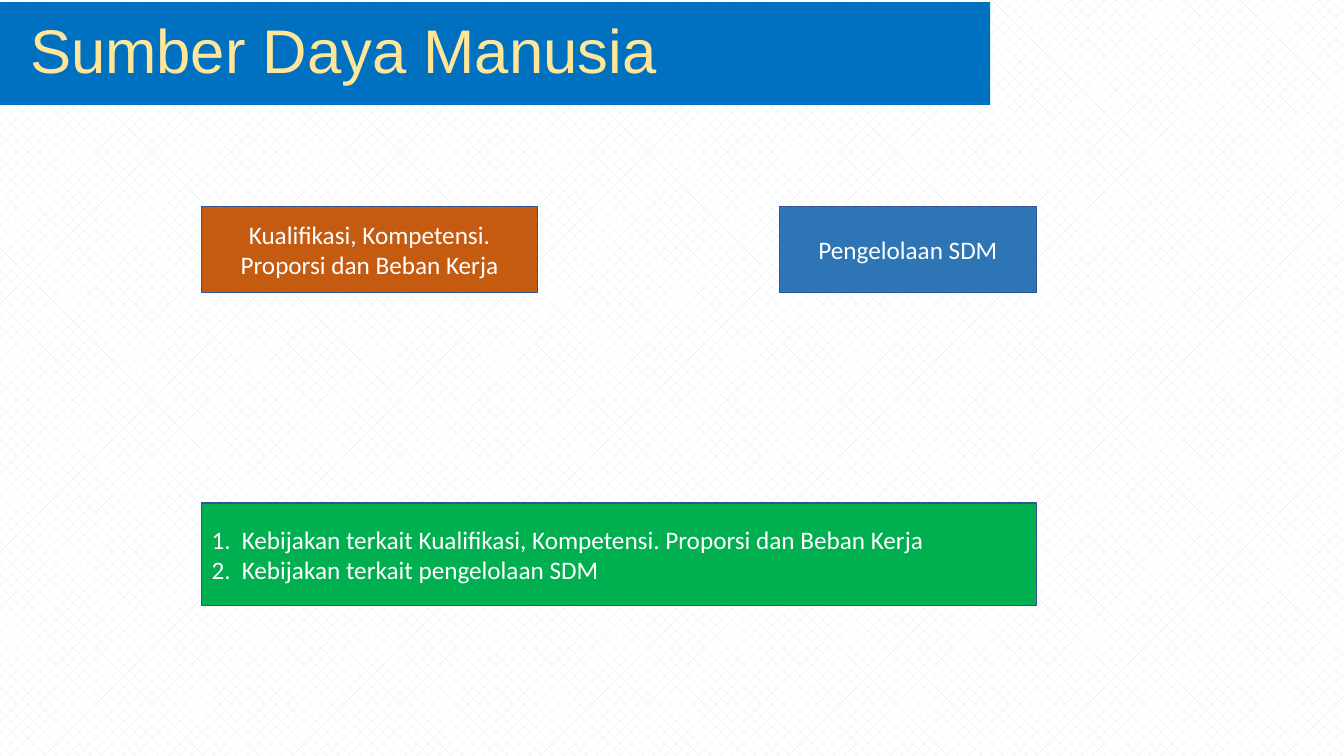
import pptx
import pptx.util
import pptx.dml.color
import pptx.enum.dml
import pptx.enum.shapes
import pptx.enum.text
from lxml import etree

Inches, Pt = pptx.util.Inches, pptx.util.Pt
RGBColor = pptx.dml.color.RGBColor
ALIGN = pptx.enum.text.PP_ALIGN

WIDTH, HEIGHT = 13.33, 7.5
WHITE = RGBColor(0xFF, 0xFF, 0xFF)
PALE_BLUE = RGBColor(0xDE, 0xEB, 0xF7)
BANNER_BLUE = RGBColor(0x00, 0x70, 0xC0)
PALE_GOLD = RGBColor(0xFF, 0xE6, 0x99)
ORANGE = RGBColor(0xC5, 0x5A, 0x11)
BLUE = RGBColor(0x2E, 0x75, 0xB6)
GREEN = RGBColor(0x00, 0xB0, 0x50)
OUTLINE = RGBColor(0x32, 0x54, 0x91)

# Content area: both rows share its left and right edges
LEFT, RIGHT = 2, 10.28
TOPIC_TOP, TOPIC_HEIGHT = 2.05, 0.85
QUALIFICATION_WIDTH, MANAGEMENT_WIDTH = 3.33, 2.55


def add_panel(slide, box, fill, outline=None):
    panel = slide.shapes.add_shape(
        pptx.enum.shapes.MSO_SHAPE.RECTANGLE, *map(Inches, box))
    panel.shadow.inherit = False
    panel.fill.solid()
    panel.fill.fore_color.rgb = fill
    if outline is None:
        panel.line.fill.background()
    else:
        panel.line.color.rgb = outline
        panel.line.width = Pt(1)
    panel.text_frame.word_wrap = True
    panel.text_frame.vertical_anchor = pptx.enum.text.MSO_ANCHOR.MIDDLE
    return panel.text_frame


def write(paragraph, words, size=18, font="Calibri", color=WHITE, align=ALIGN.LEFT):
    paragraph.alignment = align
    run = paragraph.add_run()
    run.text = words
    run.font.size = Pt(size)
    run.font.name = font
    run.font.color.rgb = color


def indent(paragraph, margin, first_line=0):
    properties = paragraph._p.get_or_add_pPr()
    properties.set("marL", str(Inches(margin)))
    properties.set("indent", str(Inches(first_line)))
    return properties


def add_banner(slide, box, title):
    heading = add_panel(slide, box, BANNER_BLUE).paragraphs[0]
    indent(heading, 0.2)
    heading.line_spacing = 0.9
    write(heading, title, 44, "Arial", PALE_GOLD)


def add_topic(slide, box, topic, fill):
    frame = add_panel(slide, box, fill, OUTLINE)
    write(frame.paragraphs[0], topic, align=ALIGN.CENTER)


def add_policies(slide, box, policies):
    frame = add_panel(slide, box, GREEN, OUTLINE)
    for index, policy in enumerate(policies):
        item = frame.add_paragraph() if index else frame.paragraphs[0]
        properties = indent(item, 0.3, -0.3)
        etree.SubElement(properties, pptx.oxml.ns.qn("a:buAutoNum"),
                         type="arabicPeriod")
        write(item, policy)


def main():
    deck = pptx.Presentation()
    deck.slide_width, deck.slide_height = Inches(WIDTH), Inches(HEIGHT)
    slide = deck.slides.add_slide(deck.slide_layouts[6])

    # Patterned background
    backdrop = slide.background.fill
    backdrop.patterned()
    backdrop.pattern = pptx.enum.dml.MSO_PATTERN.PERCENT_25
    backdrop.fore_color.rgb = PALE_BLUE
    backdrop.back_color.rgb = WHITE

    # Title banner
    add_banner(slide, (0, 0.02, 9.82, 1.02), "Sumber Daya Manusia")

    # Topics
    add_topic(slide, (LEFT, TOPIC_TOP, QUALIFICATION_WIDTH, TOPIC_HEIGHT),
              "Kualifikasi, Kompetensi. Proporsi dan Beban Kerja", ORANGE)
    add_topic(slide, (RIGHT - MANAGEMENT_WIDTH, TOPIC_TOP, MANAGEMENT_WIDTH, TOPIC_HEIGHT),
              "Pengelolaan SDM", BLUE)

    # Policies
    add_policies(slide, (LEFT, 4.99, RIGHT - LEFT, 1.02), [
        "Kebijakan terkait Kualifikasi, Kompetensi. Proporsi dan Beban Kerja",
        "Kebijakan terkait pengelolaan SDM",
    ])

    deck.save("out.pptx")


if __name__ == "__main__":
    main()
